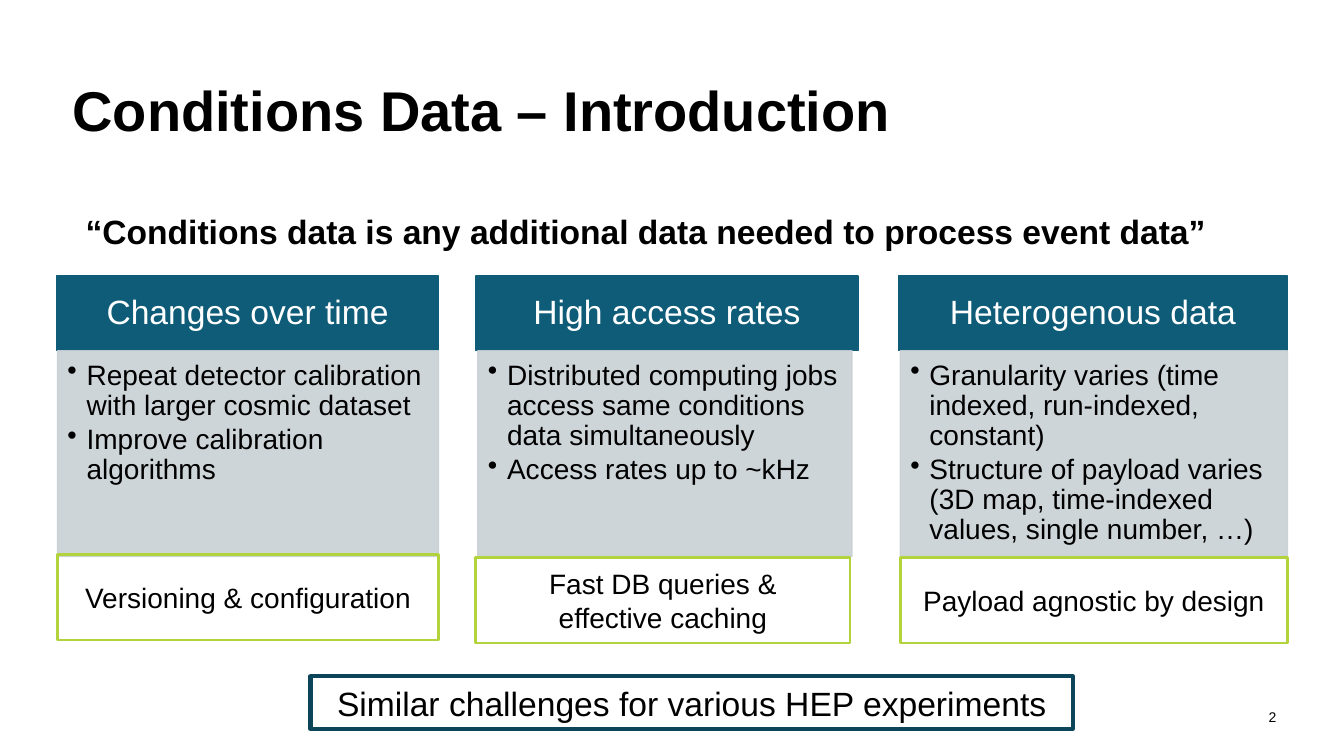
import pptx
import pptx.dml.color
import pptx.enum.shapes
import pptx.enum.text
import pptx.oxml.ns
import pptx.util
import lxml.etree

TITLE = "Conditions Data – Introduction"
QUOTE = "“Conditions data is any additional data needed to process event data”"
SUMMARY = "Similar challenges for various HEP experiments"
PAGE_NUMBER = "2"
COLUMNS = [
    {
        "heading": "Changes over time",
        "bullets": ["Repeat detector calibration with larger cosmic dataset",
                    "Improve calibration algorithms"],
        "answer": "Versioning & configuration",
        "heading_span": (0.56, 3.79), "body_span": (0.57, 3.78),
        "answer_span": (0.57, 3.78), "answer_top": 5.5,
    },
    {
        "heading": "High access rates",
        "bullets": ["Distributed computing jobs access same conditions data simultaneously",
                    "Access rates up to ~kHz"],
        "answer": "Fast DB queries &\veffective caching",
        "heading_span": (4.72, 3.79), "body_span": (4.74, 3.71),
        "answer_span": (4.72, 3.71), "answer_top": 5.53,
    },
    {
        "heading": "Heterogenous data",
        "bullets": ["Granularity varies (time indexed, run-indexed, constant)",
                    "Structure of payload varies (3D map, time-indexed values, single number, …)"],
        "answer": "Payload agnostic by design",
        "heading_span": (8.91, 3.86), "body_span": (8.93, 3.84),
        "answer_span": (8.93, 3.84), "answer_top": 5.53,
    },
]
HEADING_ROW = (2.74, 0.74)
BODY_ROW = (3.48, 2.04)
ANSWER_HEIGHT = 0.85
BLACK, WHITE, TEAL, GREY, GREEN, NAVY = "000000", "FFFFFF", "0F5C78", "C9D1D5", "B2D33B", "0C4459"
PLAIN_INSETS = (0.1, 0.05, 0.1, 0.05)
INDENT = 0.19

inches = pptx.util.Inches
qualified = pptx.oxml.ns.qn
ALIGN = pptx.enum.text.PP_ALIGN
ANCHOR = pptx.enum.text.MSO_ANCHOR


def colour(value):
    return pptx.dml.color.RGBColor.from_string(value)


def place(box, left, top, width, height):
    box.left, box.top, box.width, box.height = map(inches, (left, top, width, height))


def add_bullet(para):
    properties = para._p.get_or_add_pPr()
    properties.set("marL", str(inches(INDENT)))
    properties.set("indent", str(-inches(INDENT)))
    lxml.etree.SubElement(properties, qualified("a:buChar")).set("char", "•")


def write(box, lines, size, color=BLACK, bold=False, align=ALIGN.CENTER, anchor=ANCHOR.MIDDLE,
          insets=PLAIN_INSETS, spacing=1.0, bullets=False):
    frame = box.text_frame
    frame.word_wrap = True
    frame.vertical_anchor = anchor
    frame.margin_left, frame.margin_top, frame.margin_right, frame.margin_bottom = map(inches, insets)
    for index, line in enumerate(lines):
        para = frame.add_paragraph() if index else frame.paragraphs[0]
        para.text = line
        para.alignment = align
        para.line_spacing = spacing
        para.space_before = pptx.util.Pt(2.7 if index else 0)
        if bullets:
            add_bullet(para)
        para.font.name = "Arial"
        para.font.size = pptx.util.Pt(size)
        para.font.bold = bold
        para.font.color.rgb = colour(color)


def add_box(page, bounds, line, weight, fill=None, alpha=None):
    box = page.shapes.add_shape(pptx.enum.shapes.MSO_SHAPE.RECTANGLE, *map(inches, bounds))
    box.shadow.inherit = False
    box.line.color.rgb = colour(line)
    box.line.width = pptx.util.Pt(weight)
    if fill:
        box.fill.solid()
        box.fill.fore_color.rgb = colour(fill)
    else:
        box.fill.background()
    if alpha:
        for tint in box._element.spPr.iter(qualified("a:srgbClr")):
            lxml.etree.SubElement(tint, qualified("a:alpha")).set("val", str(alpha * 1000))
    return box


def add_column(page, column):
    def bounds(span, row):
        return span[0], row[0], span[1], row[1]

    heading = add_box(page, bounds(column["heading_span"], HEADING_ROW), TEAL, 1, TEAL)
    write(heading, [column["heading"]], 24, WHITE, insets=(0.18, 0.1, 0.18, 0.1), spacing=0.9)
    body = add_box(page, bounds(column["body_span"], BODY_ROW), GREY, 1, GREY, 90)
    write(body, column["bullets"], 20, align=ALIGN.LEFT, anchor=ANCHOR.TOP,
          insets=(0.1, 0.1, 0.14, 0.16), spacing=0.9, bullets=True)
    answer_row = (column["answer_top"], ANSWER_HEIGHT)
    answer = add_box(page, bounds(column["answer_span"], answer_row), GREEN, 2)
    write(answer, [column["answer"]], 20)


def main():
    deck = pptx.Presentation()
    deck.slide_width, deck.slide_height = inches(13.33), inches(7.5)
    page = deck.slides.add_slide(deck.slide_layouts[5])

    title = page.shapes.title
    place(title, 0.62, 0.4, 12.08, 1.45)
    write(title, [TITLE], 40, bold=True, align=ALIGN.LEFT, spacing=0.9)

    number = page.shapes.add_textbox(*map(inches, (12.24, 6.91, 0.47, 0.4)))
    write(number, [PAGE_NUMBER], 10, align=ALIGN.RIGHT, insets=(0, 0, 0.05, 0))

    quote = page.shapes.add_textbox(*map(inches, (0.75, 1.84, 11.68, 0.71)))
    write(quote, [QUOTE], 24, bold=True, align=ALIGN.LEFT, anchor=ANCHOR.TOP, spacing=1.5)

    for column in COLUMNS:
        add_column(page, column)

    summary = add_box(page, (3.08, 6.71, 7.56, 0.52), NAVY, 3)
    write(summary, [SUMMARY], 24)

    deck.save("out.pptx")


if __name__ == "__main__":
    main()
